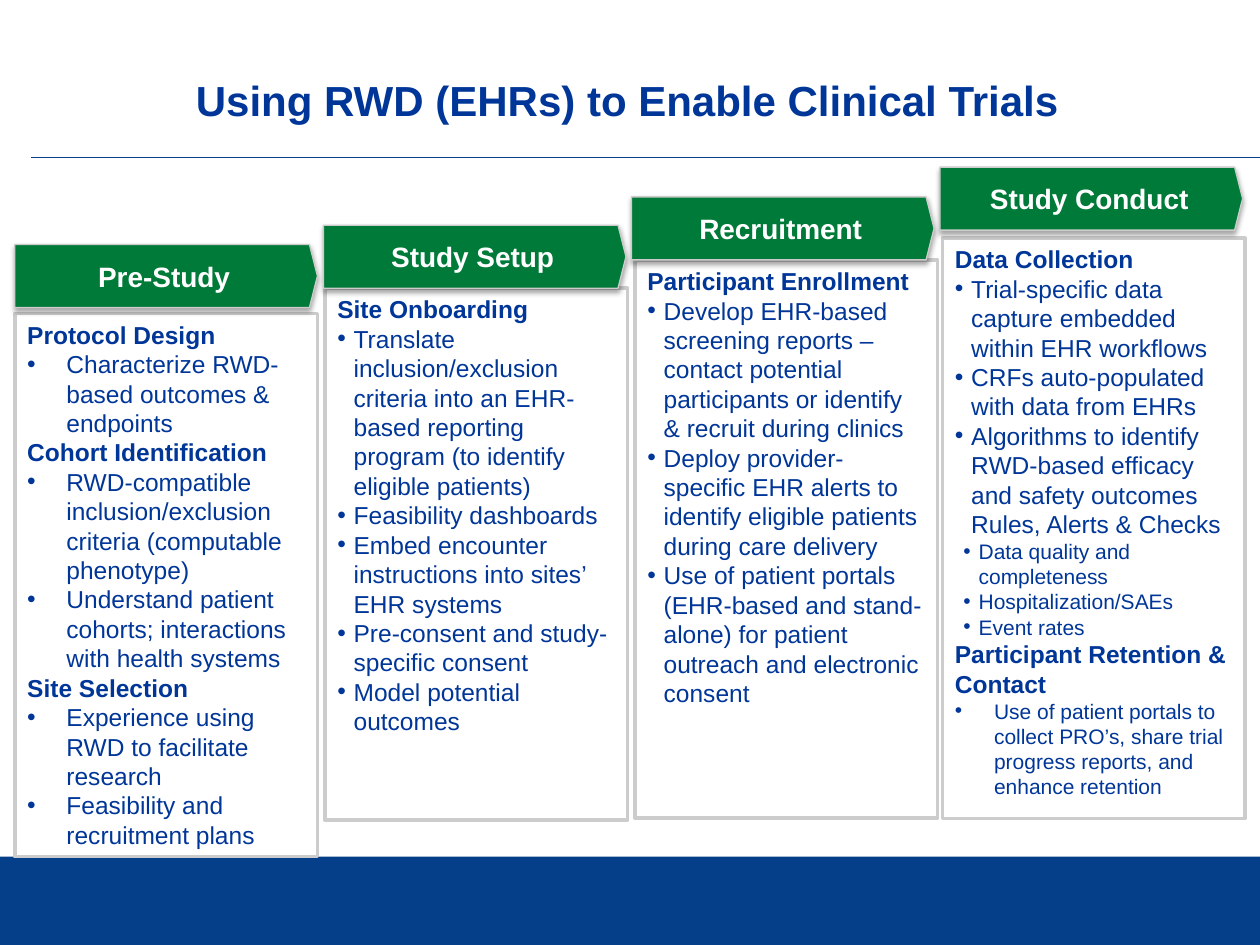
from dataclasses import dataclass

from lxml.etree import SubElement
from pptx import Presentation
from pptx.dml.color import RGBColor
from pptx.enum.shapes import MSO_CONNECTOR, MSO_SHAPE
from pptx.enum.text import MSO_ANCHOR, PP_ALIGN
from pptx.oxml.ns import qn
from pptx.util import Cm, Pt


@dataclass(frozen=True)
class Theme:
    font: str = "Arial"
    text: RGBColor = RGBColor(0x00, 0x36, 0x98)
    band: RGBColor = RGBColor(0x06, 0x3F, 0x89)
    rule: RGBColor = RGBColor(0x06, 0x3E, 0x89)
    header: RGBColor = RGBColor(0x00, 0x7A, 0x38)
    header_text: RGBColor = RGBColor(0xFF, 0xFF, 0xFF)
    border: RGBColor = RGBColor(0xCC, 0xCC, 0xCC)
    title_size: int = 24
    header_size: int = 16
    body_size: int = 14
    small_size: int = 12


THEME = Theme()


@dataclass(frozen=True)
class Item:
    text: str
    margin: float = 0.33  # cm; zero marks a heading
    hang: float = 0.33  # cm
    size: int = THEME.body_size
    level: int = 0


@dataclass(frozen=True)
class Phase:
    name: str
    header_left: float  # all positions in cm
    header_top: float
    panel_left: float
    panel_top: float
    panel_height: float
    items: tuple[Item, ...]


def heading(text: str) -> Item:
    return Item(text, margin=0, hang=0)


def wide(text: str, size: int = THEME.body_size) -> Item:
    return Item(text, margin=0.79, hang=0.79, size=size)


def sub(text: str) -> Item:
    return Item(text, margin=0.48, hang=0.31, size=THEME.small_size, level=1)


COLUMN_WIDTH = 6.1
HEADER_HEIGHT = 1.27

PHASES = (
    Phase("Pre-Study", 0.3, 4.93, 0.3, 6.32, 10.95, (
        heading("Protocol Design"),
        wide("Characterize RWD-based outcomes & endpoints"),
        heading("Cohort Identification"),
        wide("RWD-compatible inclusion/exclusion criteria (computable phenotype)"),
        wide("Understand patient cohorts; interactions with health systems"),
        heading("Site Selection"),
        wide("Experience using RWD to facilitate research"),
        wide("Feasibility and recruitment plans"),
    )),
    Phase("Study Setup", 6.52, 4.54, 6.55, 5.81, 10.72, (
        heading("Site Onboarding"),
        Item("Translate inclusion/exclusion criteria into an EHR-based reporting "
             "program (to identify eligible patients)"),
        Item("Feasibility dashboards"),
        Item("Embed encounter instructions into sites’ EHR systems"),
        Item("Pre-consent and study-specific consent"),
        Item("Model potential outcomes"),
    )),
    Phase("Recruitment", 12.73, 3.97, 12.8, 5.24, 11.25, (
        heading("Participant Enrollment"),
        Item("Develop EHR-based screening reports – contact potential participants "
             "or identify & recruit during clinics"),
        Item("Deploy provider-specific EHR alerts to identify eligible patients "
             "during care delivery"),
        Item("Use of patient portals (EHR-based and stand-alone) for patient "
             "outreach and electronic consent"),
    )),
    Phase("Study Conduct", 18.95, 3.37, 19.0, 4.8, 11.7, (
        heading("Data Collection"),
        Item("Trial-specific data capture embedded within EHR workflows"),
        Item("CRFs auto-populated with data from EHRs"),
        Item("Algorithms to identify RWD-based efficacy and safety outcomes "
             "Rules, Alerts & Checks"),
        sub("Data quality and completeness"),
        sub("Hospitalization/SAEs"),
        sub("Event rates"),
        heading("Participant Retention & Contact"),
        wide("Use of patient portals to collect PRO’s, share trial progress "
             "reports, and enhance retention", THEME.small_size),
    )),
)


def style(paragraph, size: int, color: RGBColor, bold: bool) -> None:
    for run in paragraph.runs:
        run.font.name = THEME.font
        run.font.size = Pt(size)
        run.font.bold = bold
        run.font.color.rgb = color


def add_bullet(paragraph, item: Item) -> None:
    properties = paragraph._p.get_or_add_pPr()
    properties.set("marL", str(Cm(item.margin)))
    properties.set("indent", str(-Cm(item.hang)))
    SubElement(properties, qn("a:buFont")).set("typeface", THEME.font)
    SubElement(properties, qn("a:buChar")).set("char", "•")


def add_shadow(shape) -> None:
    effects = shape._element.spPr.find(qn("a:effectLst"))
    shadow = SubElement(effects, qn("a:outerShdw"), blurRad=str(Pt(3.1)),
                        dist=str(Pt(1.8)), dir="5400000", rotWithShape="0")
    color = SubElement(shadow, qn("a:srgbClr"), val="000000")
    SubElement(color, qn("a:alpha"), val="35000")


def add_title(slide, text: str) -> None:
    title = slide.shapes.add_textbox(Cm(0.58), Cm(0.43), Cm(24.13), Cm(2.11))
    frame = title.text_frame
    frame.word_wrap = True
    frame.vertical_anchor = MSO_ANCHOR.BOTTOM
    frame.margin_left = frame.margin_right = frame.margin_top = frame.margin_bottom = 0
    frame.text = text
    paragraph = frame.paragraphs[0]
    paragraph.alignment = PP_ALIGN.CENTER
    paragraph.line_spacing = 0.9
    style(paragraph, THEME.title_size, THEME.text, True)


def add_frame(slide) -> None:
    rule = slide.shapes.add_connector(
        MSO_CONNECTOR.STRAIGHT, Cm(0.63), Cm(3.17), Cm(25.4), Cm(3.17))
    rule.line.color.rgb = THEME.rule
    rule.line.width = Pt(0.75)
    SubElement(rule._element.spPr, qn("a:effectLst"))

    band = slide.shapes.add_shape(
        MSO_SHAPE.RECTANGLE, 0, Cm(17.27), Cm(25.4), Cm(1.78))
    band.shadow.inherit = False
    band.fill.solid()
    band.fill.fore_color.rgb = THEME.band
    band.line.fill.background()


def add_panel(slide, phase: Phase) -> None:
    panel = slide.shapes.add_shape(
        MSO_SHAPE.RECTANGLE, Cm(phase.panel_left), Cm(phase.panel_top),
        Cm(COLUMN_WIDTH), Cm(phase.panel_height))
    panel.shadow.inherit = False
    panel.fill.background()
    panel.line.color.rgb = THEME.border
    panel.line.width = Pt(2)
    frame = panel.text_frame
    frame.word_wrap = True
    frame.vertical_anchor = MSO_ANCHOR.TOP
    frame.text = "\n".join(item.text for item in phase.items)
    for paragraph, item in zip(frame.paragraphs, phase.items):
        paragraph.alignment = PP_ALIGN.LEFT
        paragraph.level = item.level
        if item.margin:
            add_bullet(paragraph, item)
        style(paragraph, item.size, THEME.text, not item.margin)


def add_header(slide, phase: Phase) -> None:
    header = slide.shapes.add_shape(
        MSO_SHAPE.PENTAGON, Cm(phase.header_left), Cm(phase.header_top),
        Cm(COLUMN_WIDTH), Cm(HEADER_HEIGHT))
    header.adjustments[0] = 0.126
    header.shadow.inherit = False
    header.fill.solid()
    header.fill.fore_color.rgb = THEME.header
    header.line.color.rgb = THEME.border
    header.line.width = Pt(0.75)
    add_shadow(header)
    frame = header.text_frame
    frame.word_wrap = True
    frame.vertical_anchor = MSO_ANCHOR.MIDDLE
    frame.text = phase.name
    frame.paragraphs[0].alignment = PP_ALIGN.CENTER
    style(frame.paragraphs[0], THEME.header_size, THEME.header_text, True)


def main() -> None:
    deck = Presentation()
    deck.slide_width, deck.slide_height = Cm(25.4), Cm(19.05)
    slide = deck.slides.add_slide(deck.slide_layouts[6])

    # Slide frame and title
    add_frame(slide)
    add_title(slide, "Using RWD (EHRs) to Enable Clinical Trials")

    # Panels first, so the headers lie on top
    for add_part in (add_panel, add_header):
        for phase in PHASES:
            add_part(slide, phase)

    deck.save("out.pptx")


if __name__ == "__main__":
    main()
